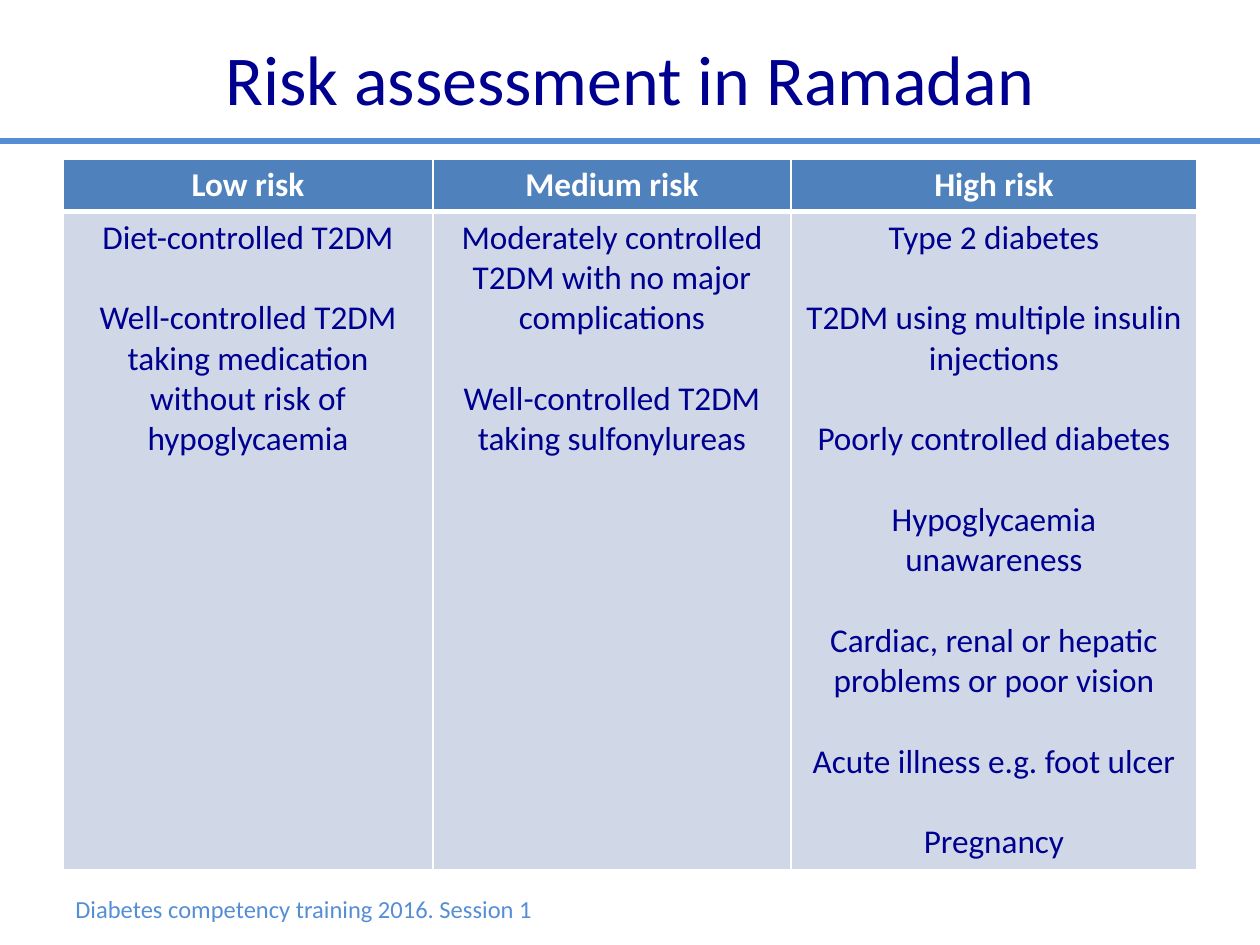
from lxml import etree
from pptx import Presentation
from pptx import util as u
from pptx.dml.color import RGBColor
from pptx.enum import shapes, text
from pptx.oxml.ns import qn

PX_PER_INCH = 126
NAVY, SKY, WHITE = "000090", "558ED5", "FFFFFF"
HEADER_FILL, BODY_FILL = "4F81BD", "D0D8E8"
LINE_PITCH = 23
COLUMN_WIDTHS = [370, 358, 406]
ROW_HEIGHTS = [52, 658]
RISKS = {
    "Low risk": [
        "Diet-controlled T2DM",
        "Well-controlled T2DM taking medication without risk of hypoglycaemia",
    ],
    "Medium risk": [
        "Moderately controlled T2DM with no major complications",
        "Well-controlled T2DM taking sulfonylureas",
    ],
    "High risk": [
        "Type 2 diabetes",
        "T2DM using multiple insulin injections",
        "Poorly controlled diabetes",
        "Hypoglycaemia unawareness",
        "Cardiac, renal or hepatic problems or poor vision",
        "Acute illness e.g. foot ulcer",
        "Pregnancy",
    ],
}


def px(*lengths):
    """Turn pixel lengths into a list of EMU values."""
    return [u.Emu(round(length * 914400 / PX_PER_INCH)) for length in lengths]


def colour(hex_string):
    """Return the colour for a hex string."""
    return RGBColor.from_string(hex_string)


def write(frame, lines, hex_string, align=text.PP_ALIGN.CENTER, gap=0, **font):
    """Fill a text frame with one formatted paragraph per line."""
    for index, line in enumerate(lines):
        para = frame.add_paragraph() if index else frame.paragraphs[0]
        para.alignment = align
        para.space_before = u.Pt(gap if index else 0)
        span = para.add_run()
        span.text = line
        span.font.color.rgb = colour(hex_string)
        for name, value in {"name": "Calibri", **font}.items():
            setattr(span.font, name, value)


def add_title(page, title):
    """Place and format the title placeholder."""
    box = page.shapes.title
    box.left, box.top, box.width, box.height = px(63, 14, 1134, 127)
    box.text_frame.vertical_anchor = text.MSO_ANCHOR.MIDDLE
    write(box.text_frame, [title], NAVY, size=u.Pt(40))


def add_rule(page):
    """Draw the line under the title across the page."""
    rule = page.shapes.add_connector(
        shapes.MSO_CONNECTOR.STRAIGHT, *px(0, 141, 1260, 141))
    rule.line.color.rgb = colour(SKY)
    rule.line.width = u.Pt(3)
    etree.SubElement(rule._element.spPr, qn("a:effectLst"))


def add_footer(page, line):
    """Add the course line at the bottom left."""
    box = page.shapes.add_textbox(*px(63, 888, 488, 43))
    box.text_frame.word_wrap = False
    write(box.text_frame, [line], SKY, text.PP_ALIGN.LEFT, size=u.Pt(14))


def set_borders(cell, **widths):
    """Give a cell white borders with a width in points for each side."""
    properties = cell._tc.get_or_add_tcPr()
    for index, (side, width) in enumerate(widths.items()):
        border = etree.Element(qn(f"a:ln{side}"), w=str(u.Pt(width)))
        fill = etree.SubElement(border, qn("a:solidFill"))
        etree.SubElement(fill, qn("a:srgbClr"), val=WHITE)
        properties.insert(index, border)


def fill_cell(cell, lines, fill, hex_string, top, bottom, bold):
    """Write a table cell with its fill and borders."""
    cell.fill.solid()
    cell.fill.fore_color.rgb = colour(fill)
    set_borders(cell, L=1, R=1, T=top, B=bottom)
    write(cell.text_frame, lines, hex_string, gap=LINE_PITCH,
          size=u.Pt(19), bold=bold)


def add_risk_table(page):
    """Add the table with one column for each risk level."""
    table = page.shapes.add_table(
        len(ROW_HEIGHTS), len(RISKS),
        *px(63, 159, sum(COLUMN_WIDTHS), sum(ROW_HEIGHTS))).table
    for row, height in zip(table.rows, px(*ROW_HEIGHTS)):
        row.height = height
    for column, width in zip(table.columns, px(*COLUMN_WIDTHS)):
        column.width = width
    for index, (level, criteria) in enumerate(RISKS.items()):
        fill_cell(table.cell(0, index), [level], HEADER_FILL, WHITE, 1, 3, True)
        fill_cell(table.cell(1, index), criteria, BODY_FILL, NAVY, 3, 1, False)


def main():
    """Build and save the deck."""
    deck = Presentation()
    deck.slide_width, deck.slide_height = px(1260, 945)
    page = deck.slides.add_slide(deck.slide_layouts.get_by_name("Title Only"))
    add_rule(page)
    add_footer(page, "Diabetes competency training 2016. Session 1")
    add_title(page, "Risk assessment in Ramadan")
    add_risk_table(page)
    deck.save("out.pptx")


if __name__ == "__main__":
    main()
